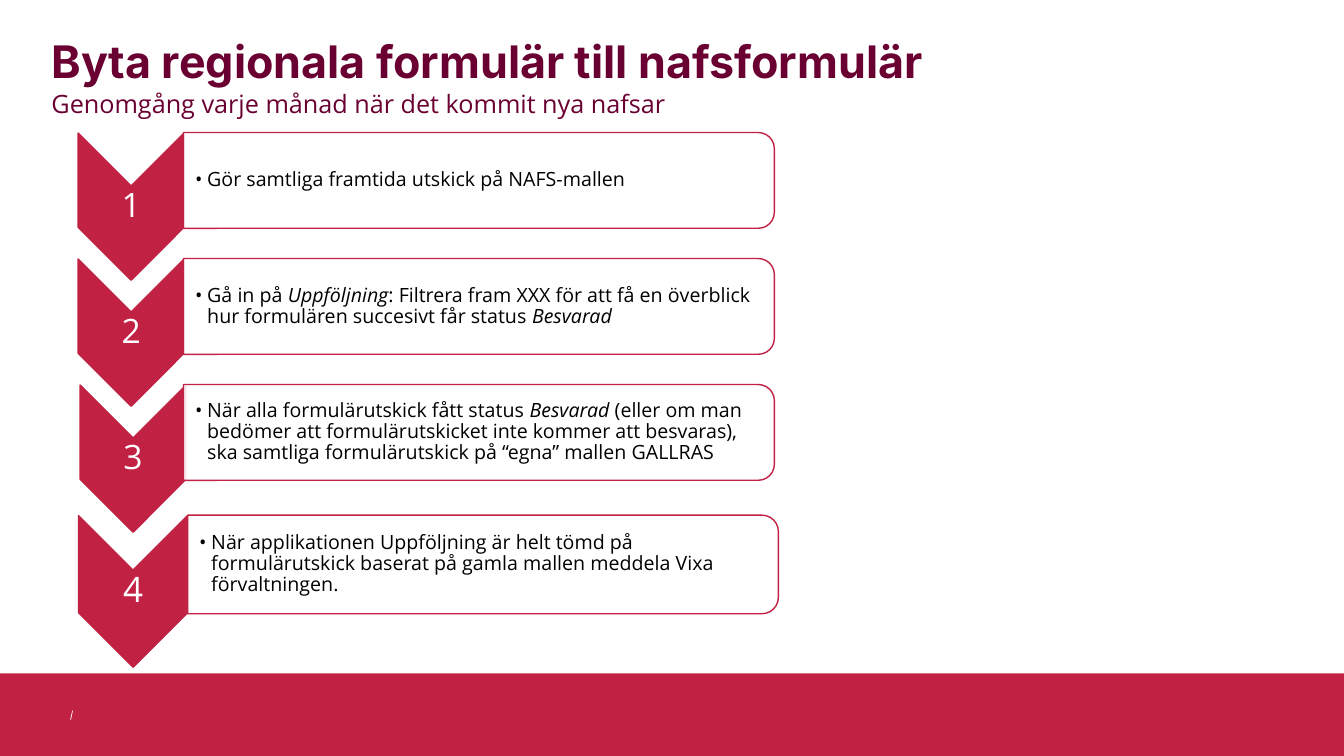
from dataclasses import dataclass

from lxml.etree import SubElement
from pptx import Presentation
from pptx.dml.color import RGBColor
from pptx.enum.shapes import MSO_CONNECTOR as Connector, MSO_SHAPE as Shape
from pptx.enum.text import MSO_ANCHOR as Anchor, PP_ALIGN as Align
from pptx.oxml.ns import qn
from pptx.util import Inches, Pt

TITLE = "Byta regionala formulär till nafsformulär"
SUBTITLE = "Genomgång varje månad när det kommit nya nafsar"


@dataclass
class Step:
    """One numbered step; runs are (text, italic), centres and sizes in inches."""
    runs: list
    chevron_x: float = 1.3
    panel_x: float = 4.75
    panel_y: float = 0
    scale: float = 1
    number_size: int = 24


FIRST_Y, PITCH = 1.79, 1.25
STEPS = [
    Step([("Gör samtliga framtida utskick på NAFS-mallen", False)],
         panel_y=FIRST_Y),
    Step([("Gå in på ", False), ("Uppföljning", True),
          (": Filtrera fram XXX för att få en överblick hur formulären "
           "succesivt får status ", False), ("Besvarad", True)],
         panel_y=FIRST_Y + PITCH),
    Step([("När alla formulärutskick fått status ", False), ("Besvarad", True),
          (" (eller om man bedömer att formulärutskicket inte kommer att "
           "besvaras), ska samtliga formulärutskick på “egna” mallen GALLRAS",
           False)],
         panel_y=FIRST_Y + 2 * PITCH, chevron_x=1.32),
    Step([("När applikationen Uppföljning är helt tömd på formulärutskick "
           "baserat på gamla mallen meddela Vixa förvaltningen.", False)],
         panel_y=5.6, chevron_x=1.32, panel_x=4.79, scale=1.03, number_size=25),
]


class Theme:
    crimson = RGBColor.from_string("C12143")
    plum = RGBColor.from_string("6A0032")
    white = RGBColor.from_string("FFFFFF")
    black = RGBColor.from_string("000000")
    heading, body = "Inter", "Open Sans"
    title_size, subtitle_size, step_size = 32, 18, 14
    line_spacing = 0.9


def add_run(paragraph, text, size, color, font=Theme.body, bold=False, italic=False):
    run = paragraph.add_run()
    run.text = text
    run.font.name, run.font.size = font, Pt(size)
    run.font.bold, run.font.italic = bold, italic
    run.font.color.rgb = color


def centred(x, y, width, height):
    return [Inches(v) for v in (x - width / 2, y - height / 2, width, height)]


def add_turned(slide, preset, x, y, length, thickness, fill):
    """Add a preset shape turned a quarter clockwise about its centre."""
    shape = slide.shapes.add_shape(preset, *centred(x, y, length, thickness))
    shape.rotation = 90
    shape.shadow.inherit = False
    shape.fill.solid()
    shape.fill.fore_color.rgb = fill
    shape.line.color.rgb = Theme.crimson
    shape.line.width = Pt(1)
    return shape


def add_label(slide, box, insets):
    """Add a middle-anchored text box and return its first paragraph."""
    frame = slide.shapes.add_textbox(*box).text_frame
    frame.word_wrap = True
    frame.vertical_anchor = Anchor.MIDDLE
    (frame.margin_left, frame.margin_top,
     frame.margin_right, frame.margin_bottom) = [Inches(v) for v in insets]
    paragraph = frame.paragraphs[0]
    paragraph.line_spacing = Theme.line_spacing
    return paragraph


def add_bullet(paragraph, indent):
    properties = paragraph._p.get_or_add_pPr()
    properties.set("marL", str(Inches(indent)))
    properties.set("indent", str(-Inches(indent)))
    SubElement(properties, qn("a:buFont")).set("typeface", Theme.body)
    SubElement(properties, qn("a:buChar")).set("char", "•")


def add_heading(slide):
    title = slide.shapes.title
    title.left, title.top = Inches(0.51), Inches(0.39)
    title.width, title.height = Inches(11.15), Inches(0.83)
    frame = title.text_frame
    frame.word_wrap = True
    frame.vertical_anchor = Anchor.TOP
    frame.margin_left = frame.margin_top = 0
    frame.margin_right = frame.margin_bottom = 0
    lines = [(TITLE, Theme.title_size, Theme.heading, True, 0),
             (SUBTITLE, Theme.subtitle_size, Theme.body, False, 3)]
    for index, (text, size, font, bold, gap) in enumerate(lines):
        paragraph = frame.add_paragraph() if index else frame.paragraphs[0]
        paragraph.alignment = Align.LEFT
        paragraph.line_spacing = Theme.line_spacing
        paragraph.space_before = Pt(gap)
        add_run(paragraph, text, size, Theme.plum, font, bold)


def add_footer(slide):
    band = slide.shapes.add_shape(Shape.RECTANGLE, 0, Inches(6.68),
                                  Inches(13.33), Inches(0.82))
    band.shadow.inherit = False
    band.fill.solid()
    band.fill.fore_color.rgb = Theme.crimson
    band.line.fill.background()
    slash = slide.shapes.add_connector(Connector.STRAIGHT, Inches(0.72), Inches(7.05),
                                       Inches(0.7), Inches(7.14))
    slash.line.color.rgb = Theme.white
    slash.line.width = Pt(0.5)
    SubElement(slash._element.spPr, qn("a:effectLst"))


def add_step(slide, number, step):
    chevron_y = step.panel_y + 0.26 * step.scale
    add_turned(slide, Shape.CHEVRON, step.chevron_x, chevron_y,
               1.46 * step.scale, 1.05 * step.scale, Theme.crimson)
    digit = add_label(slide, centred(step.chevron_x, chevron_y, 1.05 * step.scale, 0.44),
                      [0.02] * 4)
    digit.alignment = Align.CENTER
    add_run(digit, str(number), step.number_size, Theme.white)

    panel = add_turned(slide, Shape.ROUND_2_SAME_RECTANGLE, step.panel_x, step.panel_y,
                       0.95 * step.scale, 5.86, Theme.white)
    color = panel._element.spPr.find(qn("a:solidFill"))[0]
    SubElement(color, qn("a:alpha")).set("val", "90000")
    instruction = add_label(slide, centred(step.panel_x - 0.02, step.panel_y, 5.81, 0.86),
                            (0.11, 0.01, 0.01, 0.01))
    add_bullet(instruction, 0.12)
    instruction.font.size = Pt(Theme.step_size)
    for text, italic in step.runs:
        add_run(instruction, text, Theme.step_size, Theme.black, italic=italic)


def main():
    deck = Presentation()
    deck.slide_width, deck.slide_height = Inches(13.33), Inches(7.5)
    slide = deck.slides.add_slide(deck.slide_layouts[5])
    add_footer(slide)
    add_heading(slide)
    for number, step in enumerate(STEPS, 1):
        add_step(slide, number, step)
    deck.save("out.pptx")


if __name__ == "__main__":
    main()
